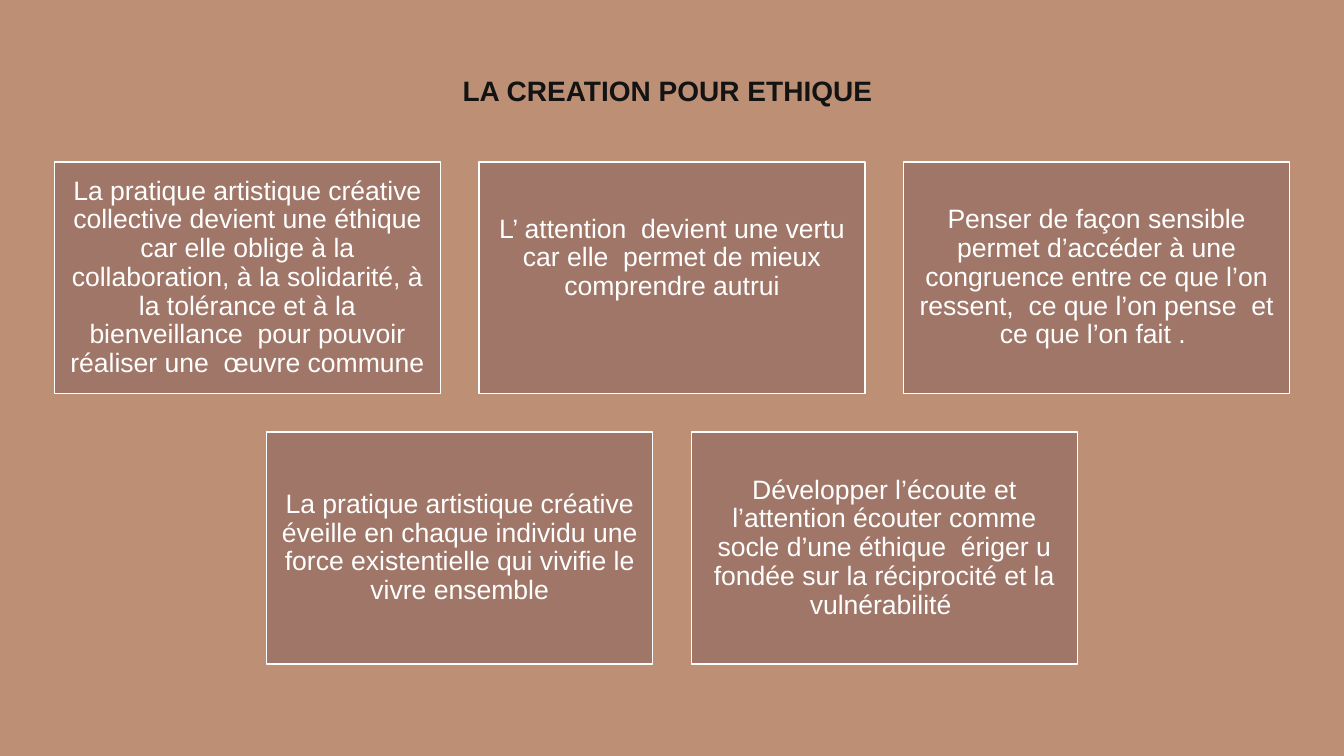
import pptx
import pptx.dml.color
import pptx.enum.shapes
import pptx.enum.text
import pptx.util

Cm = pptx.util.Cm
Pt = pptx.util.Pt

TITLE = "LA CREATION POUR ETHIQUE "
ROWS = [
    [
        ("La pratique artistique créative collective devient une éthique car elle oblige "
         "à la collaboration, à la solidarité, à la tolérance et à la bienveillance  pour "
         "pouvoir réaliser une  œuvre commune", 0),
        ("L’ attention  devient une vertu car elle  permet de mieux comprendre autrui", 0.98),
        ("Penser de façon sensible permet d’accéder à une congruence entre ce que l’on "
         "ressent,  ce que l’on pense  et ce que l’on fait . ", 0),
    ],
    [
        ("La pratique artistique créative éveille en chaque individu une force "
         "existentielle qui vivifie le vivre ensemble", 0),
        ("Développer l’écoute et l’attention écouter comme socle d’une éthique  ériger u "
         "fondée sur la réciprocité et la vulnérabilité ", 0),
    ],
]
CARD_WIDTH, CARD_HEIGHT, GAP, INSET = 9.73, 5.84, 0.97, 0.2


def color(value):
    return pptx.dml.color.RGBColor.from_string(value)


def write(box, text, size, ink, bold=False, spacing=1.0):
    frame = box.text_frame
    frame.word_wrap = True
    frame.vertical_anchor = pptx.enum.text.MSO_ANCHOR.MIDDLE
    para = frame.paragraphs[0]
    para.alignment = pptx.enum.text.PP_ALIGN.CENTER
    para.line_spacing = spacing
    span = para.add_run()
    span.text = text
    span.font.name = "Arial"
    span.font.size = Pt(size)
    span.font.bold = bold
    span.font.color.rgb = color(ink)


def add_title(page, left, top, width, height):
    box = page.shapes.add_textbox(Cm(left), Cm(top), Cm(width), Cm(height))
    write(box, TITLE, 20, "131313", bold=True)


def add_card(page, left, top, text, lift):
    card = page.shapes.add_shape(
        pptx.enum.shapes.MSO_SHAPE.RECTANGLE,
        Cm(left), Cm(top), Cm(CARD_WIDTH), Cm(CARD_HEIGHT))
    card.shadow.inherit = False
    card.fill.solid()
    card.fill.fore_color.rgb = color("9F7667")
    card.line.color.rgb = color("FFFFFF")
    card.line.width = Pt(1)
    frame = card.text_frame
    frame.margin_left = frame.margin_right = frame.margin_top = Cm(INSET)
    frame.margin_bottom = Cm(INSET + lift)
    write(card, text, 19, "FFFFFF", spacing=0.9)


def add_cards(page, left, top, width):
    for row, cards in enumerate(ROWS):
        row_width = len(cards) * (CARD_WIDTH + GAP) - GAP
        row_left = left + (width - row_width) / 2
        for column, (text, lift) in enumerate(cards):
            add_card(page, row_left + column * (CARD_WIDTH + GAP),
                     top + row * (CARD_HEIGHT + GAP), text, lift)


def main():
    deck = pptx.Presentation()
    deck.slide_width, deck.slide_height = Cm(33.87), Cm(19.05)
    page = deck.slides.add_slide(deck.slide_layouts[6])
    page.background.fill.solid()
    page.background.fill.fore_color.rgb = color("BD9075")
    add_title(page, 3.94, 1.03, 25.96, 2.5)
    add_cards(page, 1.37, 4.08, 31.13)
    deck.save("out.pptx")


if __name__ == "__main__":
    main()
